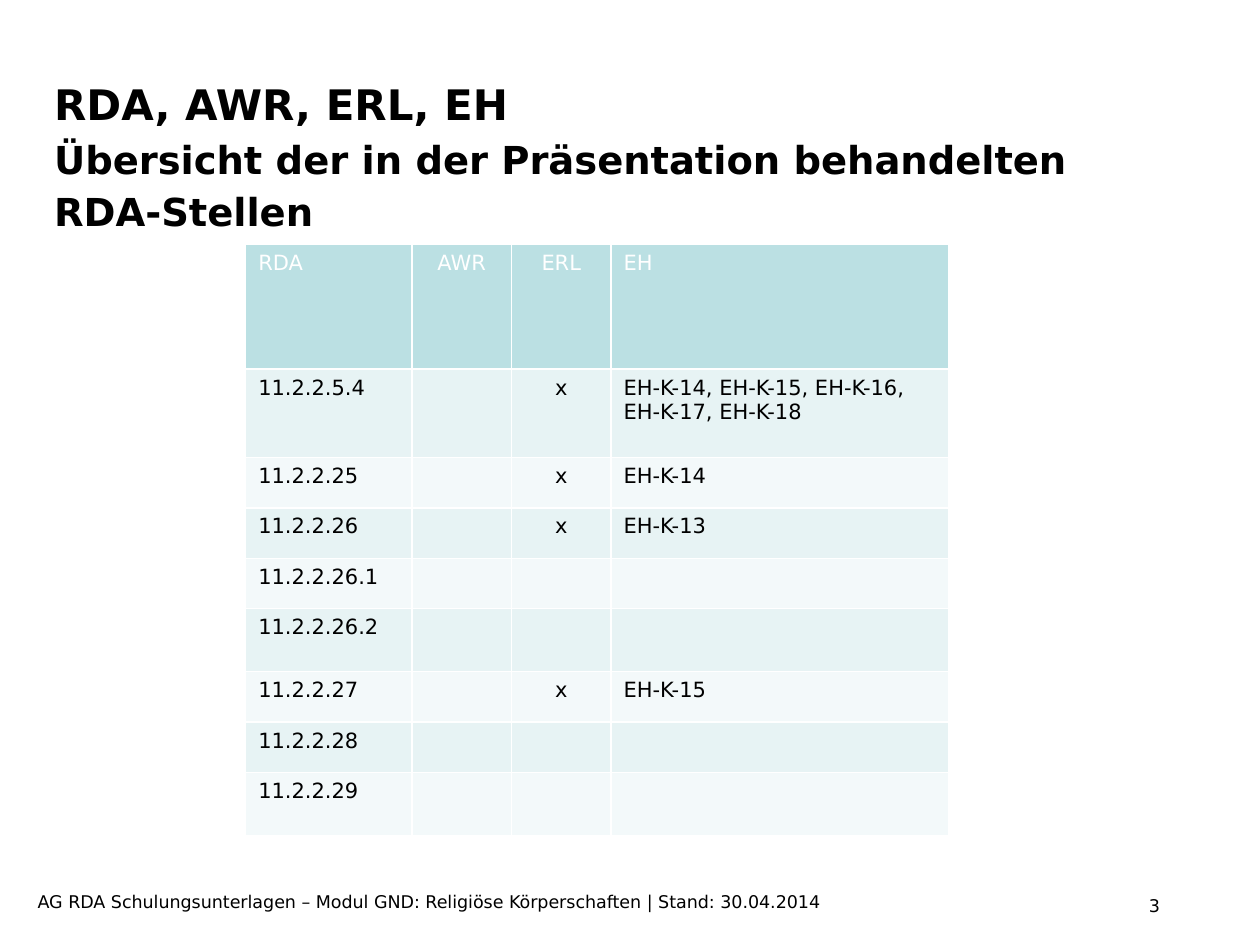
import dataclasses

import pptx
import pptx.dml.color
import pptx.enum.text
import pptx.util

WIDTH, HEIGHT = 10, 7.5
FONT = "DejaVu Sans"
BLACK, WHITE = "000000", "FFFFFF"
HEADER_FILL, BAND_FILLS = "BBE0E3", ("E7F3F4", "F3F9FA")
LEFT, CENTER = pptx.enum.text.PP_ALIGN.LEFT, pptx.enum.text.PP_ALIGN.CENTER


@dataclasses.dataclass
class Column:
    heading: str
    width: float
    align: pptx.enum.text.PP_ALIGN


@dataclasses.dataclass
class Row:
    rda: str
    height: float = 0.4
    erl: str = ""
    eh: str = ""


@dataclasses.dataclass
class Note:
    text: str
    left: float
    top: float
    width: float
    height: float


COLUMNS = [
    Column("RDA", 1.32, LEFT),
    Column("AWR", 0.79, CENTER),
    Column("ERL", 0.79, CENTER),
    Column("EH", 2.68, LEFT),
]
HEADER_HEIGHT = 0.99
ROWS = [
    Row("11.2.2.5.4", 0.7, "x", "EH-K-14, EH-K-15, EH-K-16, EH-K-17, EH-K-18"),
    Row("11.2.2.25", erl="x", eh="EH-K-14"),
    Row("11.2.2.26", erl="x", eh="EH-K-13"),
    Row("11.2.2.26.1"),
    Row("11.2.2.26.2", 0.5),
    Row("11.2.2.27", erl="x", eh="EH-K-15"),
    Row("11.2.2.28"),
    Row("11.2.2.29", 0.5),
]
NOTES = [
    Note("AG RDA Schulungsunterlagen – Modul GND: Religiöse Körperschaften | Stand: 30.04.2014",
         0.2, 7.02, 7.01, 0.27),
    Note("3", 9.02, 7.05, 0.79, 0.32),
]


def rgb(color: str) -> pptx.dml.color.RGBColor:
    return pptx.dml.color.RGBColor.from_string(color)


def style(r, size: float, color: str = BLACK, bold: bool = False) -> None:
    r.font.name = FONT
    r.font.size = pptx.util.Pt(size)
    r.font.bold = bold
    r.font.color.rgb = rgb(color)


def box(left: float, top: float, width: float, height: float) -> list:
    return [pptx.util.Inches(v) for v in (left, top, width, height)]


def add_title(slide) -> None:
    sp = slide.shapes.title
    sp.left, sp.top, sp.width, sp.height = box(0.43, 0.61, 8.2, 1.25)
    tf = sp.text_frame
    tf.margin_left = tf.margin_top = tf.margin_right = tf.margin_bottom = 0
    tf.vertical_anchor = pptx.enum.text.MSO_ANCHOR.TOP
    tf.auto_size = pptx.enum.text.MSO_AUTO_SIZE.NONE
    tf.text = "RDA, AWR, ERL, EH\vÜbersicht der in der Präsentation behandelten\vRDA-Stellen"
    p = tf.paragraphs[0]
    p.alignment = LEFT
    p.line_spacing = pptx.util.Pt(30)
    for r, size in zip(p.runs, (24, 22, 22)):
        style(r, size, bold=True)


def add_note(slide, note: Note) -> None:
    sp = slide.shapes.add_textbox(*box(note.left, note.top, note.width, note.height))
    tf = sp.text_frame
    tf.word_wrap = True
    tf.text = note.text
    style(tf.paragraphs[0].runs[0], 10)


def fill_cell(cell, text: str, align: pptx.enum.text.PP_ALIGN, fill: str, color: str) -> None:
    cell.fill.solid()
    cell.fill.fore_color.rgb = rgb(fill)
    cell.text = text
    p = cell.text_frame.paragraphs[0]
    p.alignment = align
    for r in p.runs:
        style(r, 12, color)


def add_overview(slide) -> None:
    heights = [HEADER_HEIGHT] + [row.height for row in ROWS]
    width = sum(column.width for column in COLUMNS)
    frame = slide.shapes.add_table(len(heights), len(COLUMNS),
                                   *box(1.95, 1.94, width, sum(heights)))
    table = frame.table
    for i, height in enumerate(heights):
        table.rows[i].height = pptx.util.Inches(height)
    for j, column in enumerate(COLUMNS):
        table.columns[j].width = pptx.util.Inches(column.width)
        fill_cell(table.cell(0, j), column.heading, column.align, HEADER_FILL, WHITE)
    for i, row in enumerate(ROWS):
        for j, text in enumerate((row.rda, "", row.erl, row.eh)):
            fill_cell(table.cell(i + 1, j), text, COLUMNS[j].align, BAND_FILLS[i % 2], BLACK)


def main() -> None:
    prs = pptx.Presentation()
    prs.slide_width = pptx.util.Inches(WIDTH)
    prs.slide_height = pptx.util.Inches(HEIGHT)
    slide = prs.slides.add_slide(prs.slide_layouts[5])
    for note in NOTES:
        add_note(slide, note)
    add_title(slide)
    add_overview(slide)
    prs.save("out.pptx")


if __name__ == "__main__":
    main()
